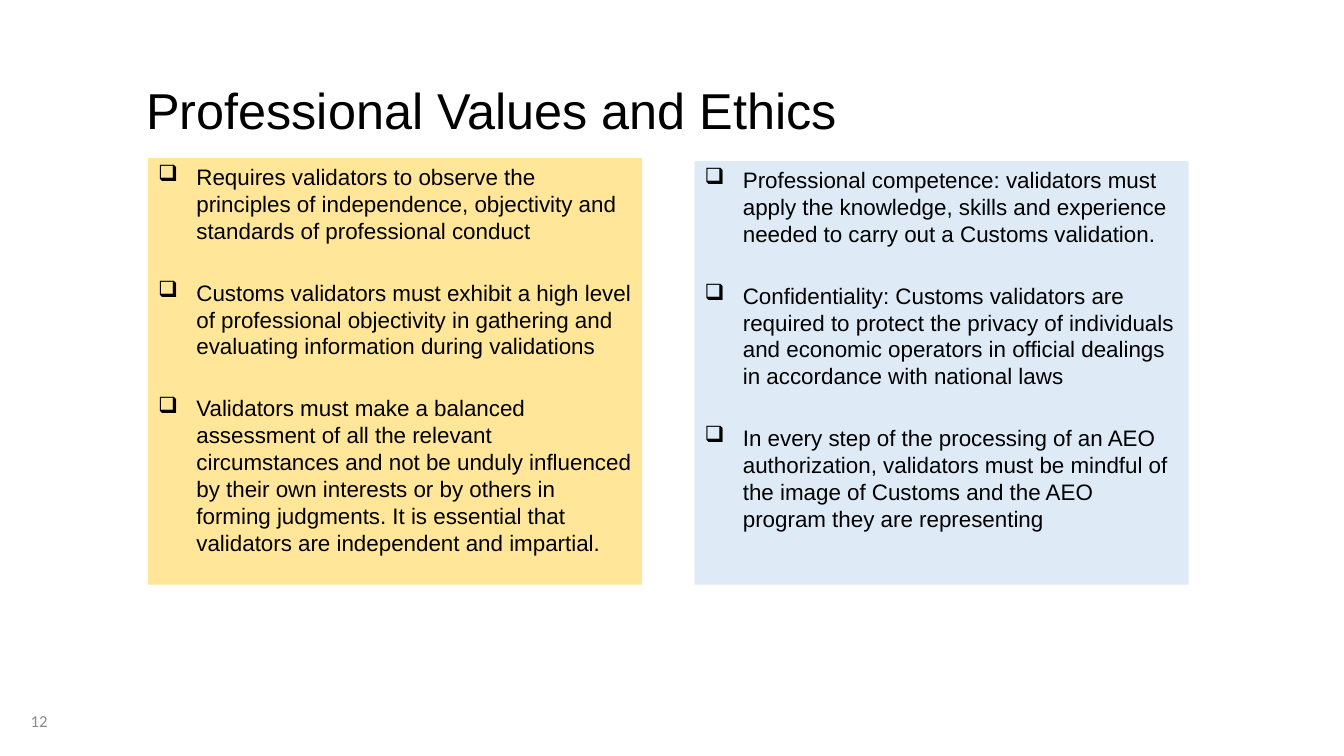
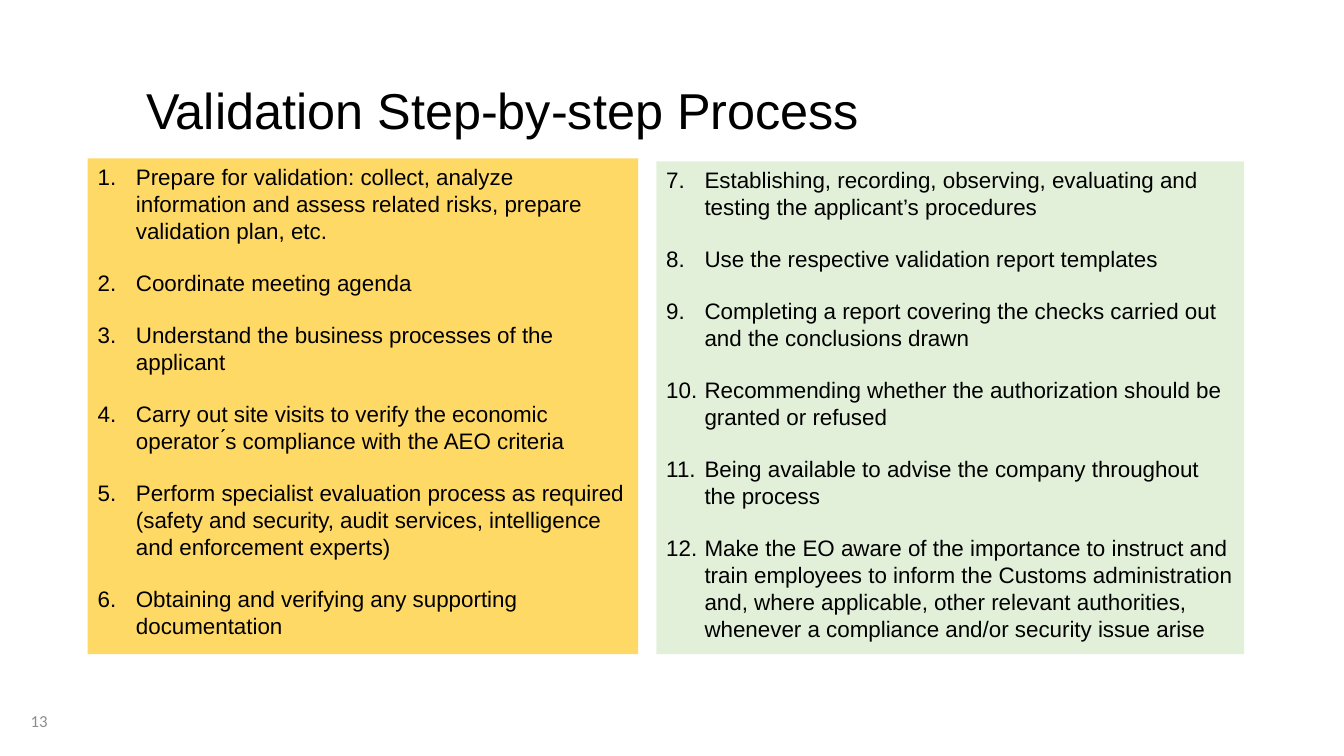
from dataclasses import dataclass

from lxml import etree
from pptx import Presentation
from pptx.dml.color import RGBColor
from pptx.enum.shapes import MSO_SHAPE
from pptx.enum.text import MSO_ANCHOR, PP_ALIGN
from pptx.oxml.ns import qn
from pptx.util import Inches, Pt

RECT = MSO_SHAPE.RECTANGLE
TOP, MIDDLE = MSO_ANCHOR.TOP, MSO_ANCHOR.MIDDLE
LEFT, RIGHT = PP_ALIGN.LEFT, PP_ALIGN.RIGHT


@dataclass(frozen=True)
class Theme:
    text: str = "000000"
    muted: str = "8C8C8C"
    pale_gold: str = "FFE699"
    gold: str = "FFD966"
    blue: str = "DEEBF7"
    green: str = "E2F0D9"
    font: str = "Arial"
    number_font: str = "Calibri"
    title_size: float = 36
    body_size: float = 16
    number_size: float = 12
    indent: float = 0.38
    left_top: float = 1.57
    right_top: float = 1.6


class Deck:
    def __init__(self, theme):
        self.theme = theme
        self.prs = Presentation()
        self.prs.slide_width = Inches(13.33)
        self.prs.slide_height = Inches(7.5)
        self.s = None

    def slide(self, title, number):
        t = self.theme
        self.s = self.prs.slides.add_slide(self.prs.slide_layouts[6])
        p = self.text_box(1.35, 0.4, 10.88, 1.45)
        p.line_spacing = 0.9
        self.run(p, title, t.title_size, t.font, t.text)
        p = self.text_box(0.07, 6.95, 0.5, 0.4)
        p.alignment = RIGHT
        self.run(p, str(number), t.number_size, t.number_font, t.muted)

    def run(self, p, text, size, font, color):
        r = p.add_run()
        r.text = text
        r.font.size = Pt(size)
        r.font.name = font
        r.font.color.rgb = RGBColor.from_string(color)

    def text_box(self, x, y, w, h):
        """Add a middle-anchored box and return its first paragraph."""
        tf = self.s.shapes.add_textbox(Inches(x), Inches(y), Inches(w), Inches(h)).text_frame
        tf.word_wrap = True
        tf.vertical_anchor = MIDDLE
        return tf.paragraphs[0]

    def list_panel(self, x, y, w, bottom, fill, items, gap, start=None):
        """Add a filled list: numbered from start, or with box bullets if start is None."""
        t = self.theme
        sp = self.s.shapes.add_shape(RECT, Inches(x), Inches(y), Inches(w), Inches(bottom - y))
        sp.shadow.inherit = False
        sp.fill.solid()
        sp.fill.fore_color.rgb = RGBColor.from_string(fill)
        sp.line.fill.background()
        tf = sp.text_frame
        tf.word_wrap = True
        tf.vertical_anchor = TOP
        for i, item in enumerate(items):
            p = tf.add_paragraph() if i else tf.paragraphs[0]
            p.alignment = LEFT
            if i:
                p.space_before = Pt(gap)
            self.bullet(p, start)
            self.run(p, item, t.body_size, t.font, t.text)

    def bullet(self, p, start):
        pPr = p._p.get_or_add_pPr()
        indent = Inches(self.theme.indent)
        pPr.set("marL", str(indent))
        pPr.set("indent", str(-indent))
        if start is None:
            etree.SubElement(pPr, qn("a:buChar"), char="❑")
        else:
            etree.SubElement(pPr, qn("a:buFont"), typeface=self.theme.font)
            etree.SubElement(pPr, qn("a:buAutoNum"), type="arabicPeriod", startAt=str(start))


VALUES_LEFT = [
    "Requires validators to observe the principles of independence, objectivity and "
    "standards of professional conduct",
    "Customs validators must exhibit a high level of professional objectivity in "
    "gathering and evaluating information during validations",
    "Validators must make a balanced assessment of all the relevant circumstances and "
    "not be unduly influenced by their own interests or by others in forming judgments. "
    "It is essential that validators are independent and impartial.",
]
VALUES_RIGHT = [
    "Professional competence: validators must apply the knowledge, skills and "
    "experience needed to carry out a Customs validation.",
    "Confidentiality: Customs validators are required to protect the privacy of "
    "individuals and economic operators in official dealings in accordance with "
    "national laws",
    "In every step of the processing of an AEO authorization, validators must be "
    "mindful of the image of Customs and the AEO program they are representing",
]
STEPS = [
    "Prepare for validation: collect, analyze information and assess related risks, "
    "prepare validation plan, etc.",
    "Coordinate meeting agenda",
    "Understand the business processes of the applicant",
    "Carry out site visits to verify the economic operator ́s compliance with the AEO "
    "criteria",
    "Perform specialist evaluation process as required (safety and security, audit "
    "services, intelligence and enforcement experts)",
    "Obtaining and verifying any supporting documentation",
    "Establishing, recording, observing, evaluating and testing the applicant’s "
    "procedures",
    "Use the respective validation report templates",
    "Completing a report covering the checks carried out and the conclusions drawn",
    "Recommending whether the authorization should be granted or refused",
    "Being available to advise the company throughout the process",
    "Make the EO aware of the importance to instruct and train employees to inform the "
    "Customs administration and, where applicable, other relevant authorities, whenever "
    "a compliance and/or security issue arise",
]


def main():
    t = Theme()
    deck = Deck(t)

    deck.slide("Professional Values and Ethics", 12)
    gap, bottom = 25, 5.8
    deck.list_panel(1.47, t.left_top, 4.9, bottom, t.pale_gold, VALUES_LEFT, gap)
    deck.list_panel(6.89, t.right_top, 4.9, bottom, t.blue, VALUES_RIGHT, gap)

    deck.slide("Validation Step-by-step Process", 13)
    gap, bottom, half = 18, 6.49, len(STEPS) // 2
    deck.list_panel(0.87, t.left_top, 5.46, bottom, t.gold, STEPS[:half], gap, start=1)
    deck.list_panel(6.51, t.right_top, 5.83, bottom, t.green, STEPS[half:], gap, start=half + 1)

    deck.prs.save("out.pptx")


if __name__ == "__main__":
    main()
